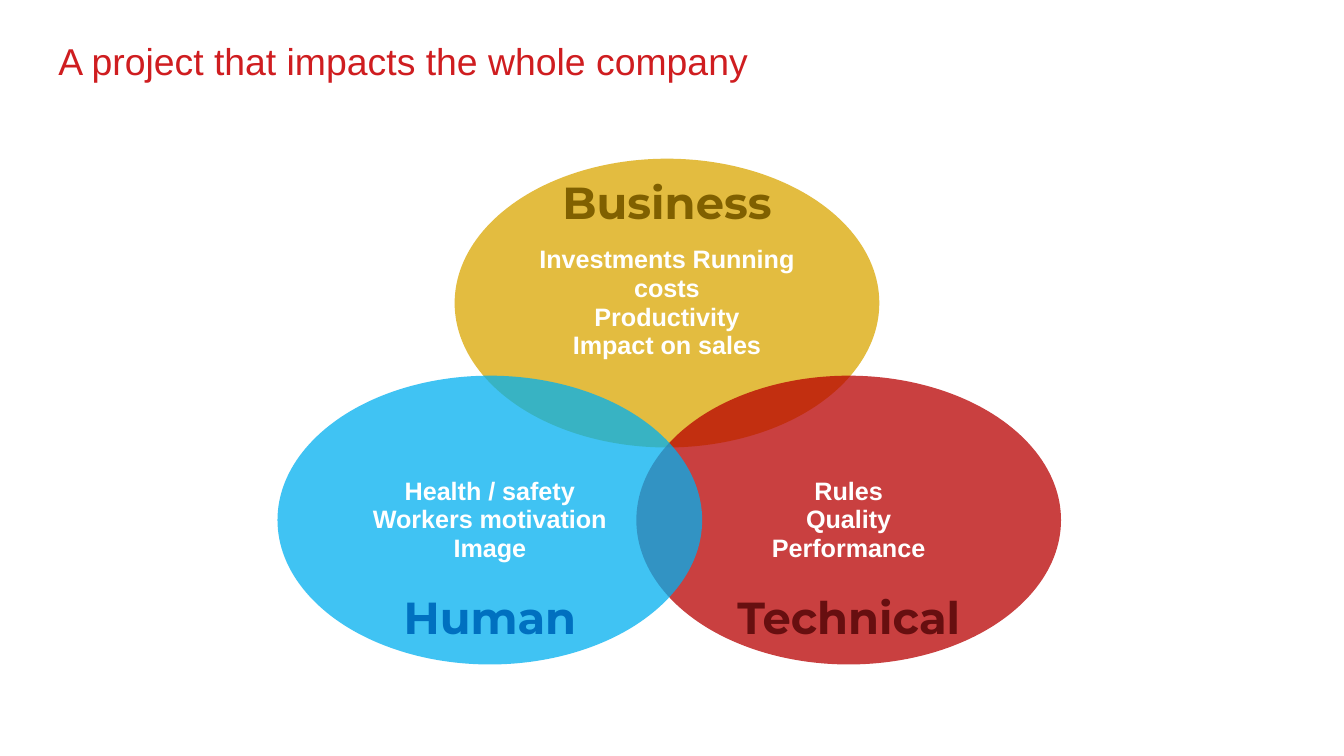
import pptx
import pptx.util
import pptx.dml.color
import pptx.enum.shapes
import pptx.enum.text
import pptx.oxml.ns
from lxml import etree

RGBColor = pptx.dml.color.RGBColor
TITLE_RED = RGBColor(0xCF, 0x1D, 0x20)
WHITE = RGBColor(0xFF, 0xFF, 0xFF)
GOLD = RGBColor(0xDA, 0xA6, 0x00)
DARK_GOLD = RGBColor(0x80, 0x60, 0x00)
RED = RGBColor(0xB8, 0x00, 0x00)
DARK_RED = RGBColor(0x67, 0x0F, 0x10)
SKY = RGBColor(0x00, 0xB0, 0xF0)
BLUE = RGBColor(0x00, 0x70, 0xC0)

ANCHOR = pptx.enum.text.MSO_ANCHOR
ALIGN = pptx.enum.text.PP_ALIGN

# A 16:9 page
deck = pptx.Presentation()
deck.slide_width = pptx.util.Inches(10)
deck.slide_height = deck.slide_width * 9 // 16
page = deck.slides.add_slide(deck.slide_layouts[5])


def place(shape, left, top, width, height):
    """Set a shape's position and size in percent of the slide's size."""
    shape.left, shape.width = (round(deck.slide_width * share / 100) for share in (left, width))
    shape.top, shape.height = (round(deck.slide_height * share / 100) for share in (top, height))


def write_centred(shape, lines, font_name, size, color, wrap):
    """Fill a shape with bold centred lines, without insets."""
    frame = shape.text_frame
    frame.margin_left = frame.margin_right = frame.margin_top = frame.margin_bottom = 0
    frame.vertical_anchor = ANCHOR.MIDDLE
    frame.word_wrap = wrap
    frame.text = "\n".join(lines)
    for para in frame.paragraphs:
        para.alignment = ALIGN.CENTER
        para.line_spacing = 0.95
        para.font.name = font_name
        para.font.size = pptx.util.Pt(size)
        para.font.bold = True
        para.font.color.rgb = color


# Title
title = page.shapes.title
place(title, 3.34, 4.1, 92.3, 7.8)
title.text_frame.text = "A project that impacts the whole company"
title.text_frame.vertical_anchor = ANCHOR.TOP
title.text_frame.word_wrap = True
heading = title.text_frame.paragraphs[0]
heading.alignment = ALIGN.LEFT
heading.font.name = "Arial"
heading.font.size = pptx.util.Pt(20)
heading.font.color.rgb = TITLE_RED

# Areas of the diagram: name, centre, tops of ellipse and label, colours, lines
ELLIPSE_WIDTH, ELLIPSE_HEIGHT = 31.6, 38.2
LABEL_WIDTH, LABEL_HEIGHT = 17.9, 5.3
UPPER, LOWER = (21, 24.4), (49.7, 79.3)
areas = [
    ("Business", 49.63, UPPER, GOLD, DARK_GOLD,
     ["Investments Running costs", "Productivity", "Impact on sales"]),
    ("Technical", 63.15, LOWER, RED, DARK_RED,
     ["Rules", "Quality", "Performance"]),
    ("Human", 36.45, LOWER, SKY, BLUE,
     ["Health / safety", "Workers motivation", "Image"]),
]

# Translucent ellipses
for name, center, (top, label_top), fill, label_color, lines in areas:
    ellipse = page.shapes.add_shape(pptx.enum.shapes.MSO_SHAPE.OVAL, 0, 0, 0, 0)
    place(ellipse, center - ELLIPSE_WIDTH / 2, top, ELLIPSE_WIDTH, ELLIPSE_HEIGHT)
    ellipse.shadow.inherit = False
    ellipse.line.fill.background()
    ellipse.fill.solid()
    ellipse.fill.fore_color.rgb = fill
    color = ellipse.element.spPr.find(".//" + pptx.oxml.ns.qn("a:srgbClr"))
    etree.SubElement(color, pptx.oxml.ns.qn("a:alpha"), val="75000")
    write_centred(ellipse, lines, "Arial", 13.5, WHITE, True)

# Labels in front of all ellipses
for name, center, (top, label_top), fill, label_color, lines in areas:
    label = page.shapes.add_textbox(0, 0, 0, 0)
    place(label, center - LABEL_WIDTH / 2, label_top, LABEL_WIDTH, LABEL_HEIGHT)
    write_centred(label, [name], "Montserrat", 24, label_color, False)

deck.save("out.pptx")
